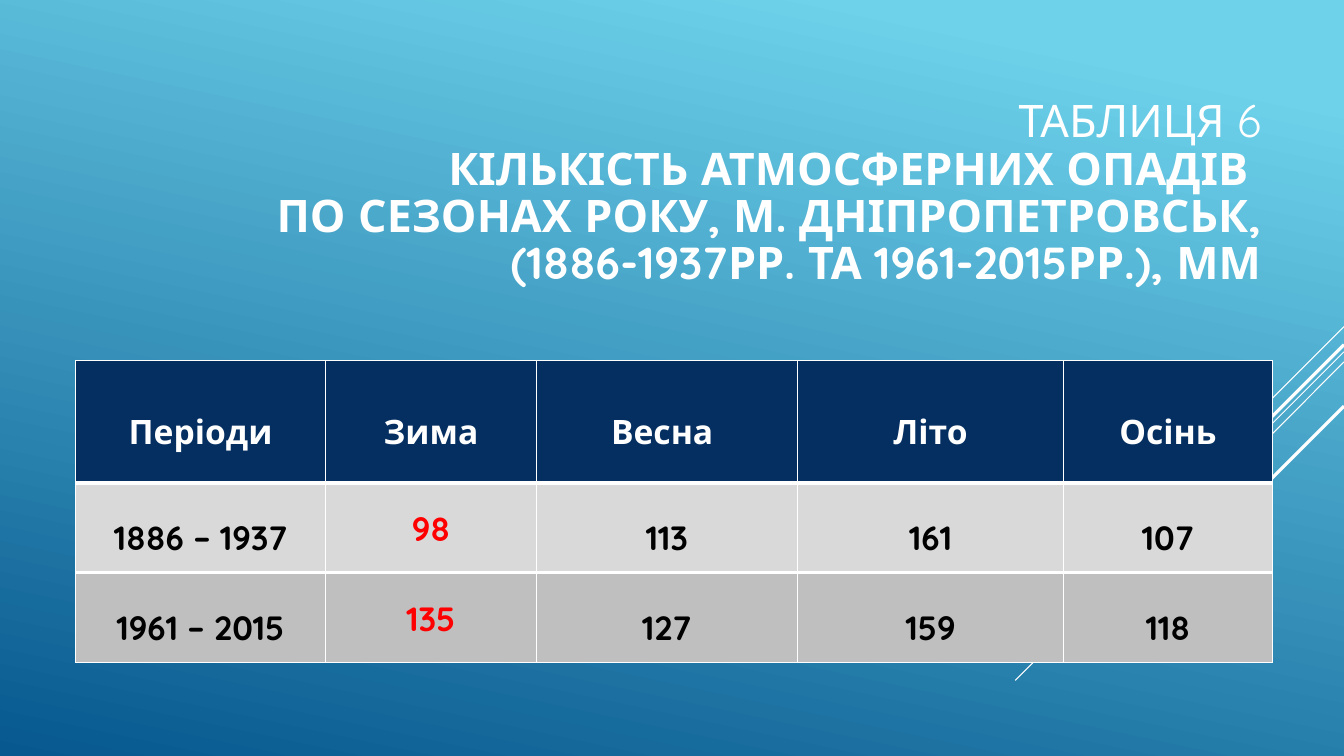
from lxml import etree
from pptx import Presentation
from pptx.dml.color import RGBColor
from pptx.enum import shapes, text
from pptx.oxml import ns
from pptx.util import Inches, Pt

WHITE = RGBColor(0xFF, 0xFF, 0xFF)
BLACK = RGBColor(0, 0, 0)
RED = RGBColor(0xFF, 0, 0)
NAVY = RGBColor(0x05, 0x2F, 0x61)
LIGHT_GREY = RGBColor(0xD9, 0xD9, 0xD9)
MID_GREY = RGBColor(0xBF, 0xBF, 0xBF)
SKY = RGBColor(0x6E, 0xD2, 0xEB)
DEEP_BLUE = RGBColor(0x06, 0x58, 0x8E)
FONT = "Quicksand"


def set_font(font, size, color):
    font.name = FONT
    font.size = Pt(size)
    font.color.rgb = color


def add_border(cell, side, width):
    ln = etree.SubElement(cell._tc.get_or_add_tcPr(), ns.qn(f"a:ln{side}"), w=str(Pt(width)))
    fill = etree.SubElement(ln, ns.qn("a:solidFill"))
    etree.SubElement(fill, ns.qn("a:srgbClr"), val=str(WHITE))


prs = Presentation()
prs.slide_width = Inches(13.33)
prs.slide_height = Inches(7.5)
s = prs.slides.add_slide(prs.slide_layouts[5])

bg = s.background.fill
bg.gradient()
bg.gradient_angle = 360 - 102
for stop, position, color in zip(bg.gradient_stops, (0.1, 1), (SKY, DEEP_BLUE)):
    stop.position = position
    stop.color.rgb = color

diagonals = [
    (3.24, 12.33, 4.24, 0.75),
    (3.49, 10.07, 6.75, 0.75),
    (3.59, 11.26, 5.67, 0.75),
    (3.42, 11.42, 5.33, 2.25),
    (4.03, 11.94, 5.42, 2.25),
]
for top, x, y, width in diagonals:
    line = s.shapes.add_connector(
        shapes.MSO_CONNECTOR.STRAIGHT, Inches(13.33), Inches(top), Inches(x), Inches(y))
    line.line.color.rgb = WHITE
    line.line.width = Pt(width)
    etree.SubElement(line._element.spPr, ns.qn("a:effectLst"))

title = s.shapes.title
title.left, title.top = Inches(0.75), Inches(0.43)
title.width, title.height = Inches(11.86), Inches(3)
tf = title.text_frame
tf.word_wrap = True
tf.auto_size = text.MSO_AUTO_SIZE.NONE
tf.vertical_anchor = text.MSO_ANCHOR.MIDDLE
p = tf.paragraphs[0]
p.alignment = text.PP_ALIGN.RIGHT
p.line_spacing = 0.88
set_font(p.font, 32, WHITE)
title_lines = [
    "ТАБЛИЦЯ 6",
    "КІЛЬКІСТЬ АТМОСФЕРНИХ ОПАДІВ ",
    "ПО СЕЗОНАХ РОКУ, М. ДНІПРОПЕТРОВСЬК,",
    " (1886-1937РР. ТА 1961-2015РР.), ММ",
]
for i, title_line in enumerate(title_lines):
    if i:
        p.add_line_break()
    r = p.add_run()
    r.text = title_line
    r.font.bold = i > 0

rows = [
    (1.21, NAVY, WHITE, ["Періоди", "Зима", "Весна ", "Літо", "Осінь"]),
    (0.89, LIGHT_GREY, BLACK, ["1886 – 1937", "98", "113", "161", "107"]),
    (0.89, MID_GREY, BLACK, ["1961 – 2015", "135", "127", "159", "118"]),
]
table = s.shapes.add_table(
    3, 5, Inches(0.75), Inches(3.58), Inches(11.86), Inches(2.98)).table
for column, width in zip(table.columns, (2.48, 2.09, 2.59, 2.64, 2.07)):
    column.width = Inches(width)
for i, (height, fill, color, values) in enumerate(rows):
    table.rows[i].height = Inches(height)
    for j, value in enumerate(values):
        cell = table.cell(i, j)
        borders = {"L": 1, "R": 1, "T": 3 if i else 1, "B": 1 if i == 2 else 3}
        for side, width in borders.items():
            add_border(cell, side, width)
        cell.fill.solid()
        cell.fill.fore_color.rgb = fill
        cell.vertical_anchor = text.MSO_ANCHOR.MIDDLE
        cell.margin_left = cell.margin_right = Inches(0.07)
        cell.margin_top = cell.margin_bottom = 0
        winter = i > 0 and j == 1
        p = cell.text_frame.paragraphs[0]
        p.text = value
        p.alignment = text.PP_ALIGN.CENTER
        p.line_spacing = 1.07 if winter else 1.5
        set_font(p.font, 24, RED if winter else color)
        p.font.bold = True

prs.save("out.pptx")
